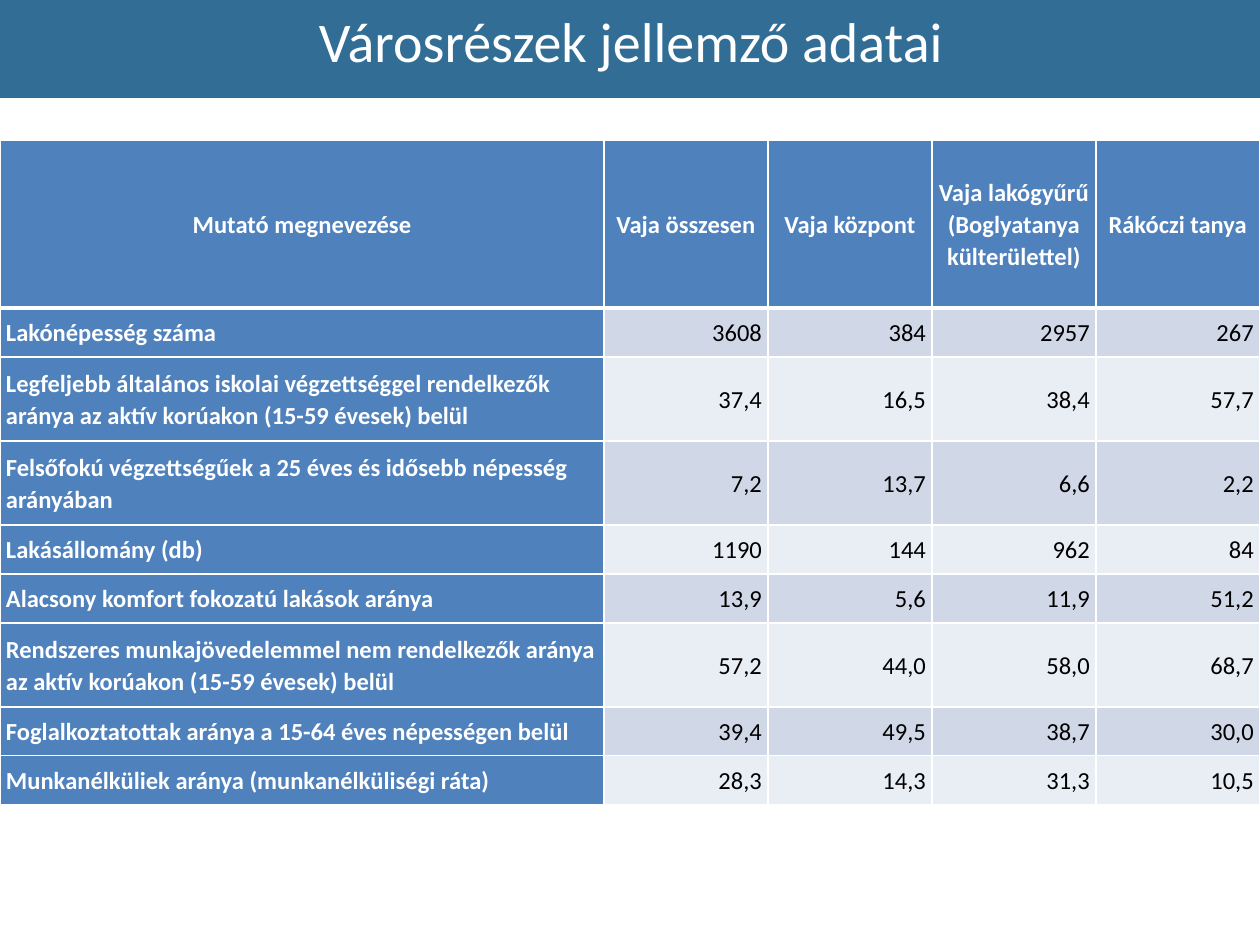
from dataclasses import dataclass

from lxml.etree import SubElement
from pptx import Presentation
from pptx.dml.color import RGBColor
from pptx.enum.shapes import MSO_SHAPE as Shape
from pptx.enum.text import MSO_ANCHOR as Anchor, MSO_AUTO_SIZE as AutoSize, PP_ALIGN as Align
from pptx.oxml.ns import qn
from pptx.util import Emu, Pt

EMU_PER_PX = 914400 // 126


@dataclass(frozen=True)
class Theme:
    font: str = "Calibri"
    title_size: int = 32
    table_size: int = 14
    banner: str = "145887"
    banner_opacity: int = 87
    heading: str = "4F81BD"
    bands: tuple = ("D0D8E8", "E9EDF4")
    light: str = "FFFFFF"
    dark: str = "000000"
    line_spacing: float = 1.07
    rule: int = 1
    header_rule: int = 3


THEME = Theme()

HEADINGS = ["Mutató megnevezése", "Vaja összesen", "Vaja központ",
            "Vaja lakógyűrű (Boglyatanya külterülettel)", "Rákóczi tanya"]
INDICATORS = [
    ["Lakónépesség száma", "3608", "384", "2957", "267"],
    ["Legfeljebb általános iskolai végzettséggel rendelkezők aránya "
     "az aktív korúakon (15-59 évesek) belül", "37,4", "16,5", "38,4", "57,7"],
    ["Felsőfokú végzettségűek a 25 éves és idősebb népesség arányában",
     "7,2", "13,7", "6,6", "2,2"],
    ["Lakásállomány (db)", "1190", "144", "962", "84"],
    ["Alacsony komfort fokozatú lakások aránya", "13,9", "5,6", "11,9", "51,2"],
    ["Rendszeres munkajövedelemmel nem rendelkezők aránya "
     "az aktív korúakon (15-59 évesek) belül", "57,2", "44,0", "58,0", "68,7"],
    ["Foglalkoztatottak aránya a 15-64 éves népességen belül",
     "39,4", "49,5", "38,7", "30,0"],
    ["Munkanélküliek aránya (munkanélküliségi ráta)", "28,3", "14,3", "31,3", "10,5"],
]
COLUMN_WIDTHS = [604] + [164] * 4
HEADER_HEIGHT, ONE_LINE, TWO_LINES = 168, 49, 84
ROW_HEIGHTS = [HEADER_HEIGHT, ONE_LINE, TWO_LINES, TWO_LINES, ONE_LINE,
               ONE_LINE, TWO_LINES, ONE_LINE, ONE_LINE]


def px(length):
    return Emu(length * EMU_PER_PX)


def box(*lengths):
    return [px(length) for length in lengths]


def set_text(paragraph, text, size, color, align, bold=False):
    paragraph.text = text
    paragraph.alignment = align
    font = paragraph.font
    font.name, font.size, font.bold = THEME.font, Pt(size), bold
    font.color.rgb = RGBColor.from_string(color)


def add_banner(slide):
    banner = slide.shapes.add_shape(Shape.RECTANGLE, *box(0, 0, 1260, 98))
    banner.shadow.inherit = False
    banner.line.fill.background()
    banner.fill.solid()
    banner.fill.fore_color.rgb = RGBColor.from_string(THEME.banner)
    color = next(banner.fill._xPr.iter(qn("a:srgbClr")))
    SubElement(color, qn("a:alpha"), val=str(THEME.banner_opacity * 1000))


def add_title(slide, text):
    frame = slide.shapes.add_textbox(*box(168, 0, 926, 81)).text_frame
    frame.word_wrap = True
    frame.auto_size = AutoSize.SHAPE_TO_FIT_TEXT
    set_text(frame.paragraphs[0], text, THEME.title_size, THEME.light, Align.CENTER)


def set_borders(cell, top, bottom):
    """Draw light cell borders; must run before the cell's fill is set."""
    properties = cell._tc.get_or_add_tcPr()
    widths = {"a:lnL": THEME.rule, "a:lnR": THEME.rule, "a:lnT": top, "a:lnB": bottom}
    for side, width in widths.items():
        line = SubElement(properties, qn(side), w=str(Pt(width)))
        fill = SubElement(line, qn("a:solidFill"))
        SubElement(fill, qn("a:srgbClr"), val=THEME.light)


def style_cell(cell, text, row, column):
    is_header, is_label = row == 0, column == 0
    is_heading = is_header or is_label
    set_borders(cell,
                top=THEME.header_rule if row == 1 else THEME.rule,
                bottom=THEME.header_rule if is_header else THEME.rule)
    cell.fill.solid()
    fill = THEME.heading if is_heading else THEME.bands[(row - 1) % 2]
    cell.fill.fore_color.rgb = RGBColor.from_string(fill)
    cell.margin_left = cell.margin_right = px(6)
    cell.margin_top = cell.margin_bottom = 0
    cell.vertical_anchor = Anchor.MIDDLE
    align = Align.CENTER if is_header else Align.LEFT if is_label else Align.RIGHT
    paragraph = cell.text_frame.paragraphs[0]
    set_text(paragraph, text, THEME.table_size,
             THEME.light if is_heading else THEME.dark, align, is_heading)
    paragraph.line_spacing = THEME.line_spacing


def add_indicator_table(slide):
    records = [HEADINGS] + INDICATORS
    place = box(0, 140, sum(COLUMN_WIDTHS), sum(ROW_HEIGHTS))
    table = slide.shapes.add_table(len(records), len(HEADINGS), *place).table
    table.first_col = True
    for column, width in zip(table.columns, COLUMN_WIDTHS):
        column.width = px(width)
    for row, height in zip(table.rows, ROW_HEIGHTS):
        row.height = px(height)
    for r, record in enumerate(records):
        for c, text in enumerate(record):
            style_cell(table.cell(r, c), text, r, c)


def main():
    deck = Presentation()
    deck.slide_width, deck.slide_height = px(1260), px(945)
    slide = deck.slides.add_slide(deck.slide_layouts[6])
    add_banner(slide)
    add_title(slide, "Városrészek jellemző adatai")
    add_indicator_table(slide)
    deck.save("out.pptx")


if __name__ == "__main__":
    main()
